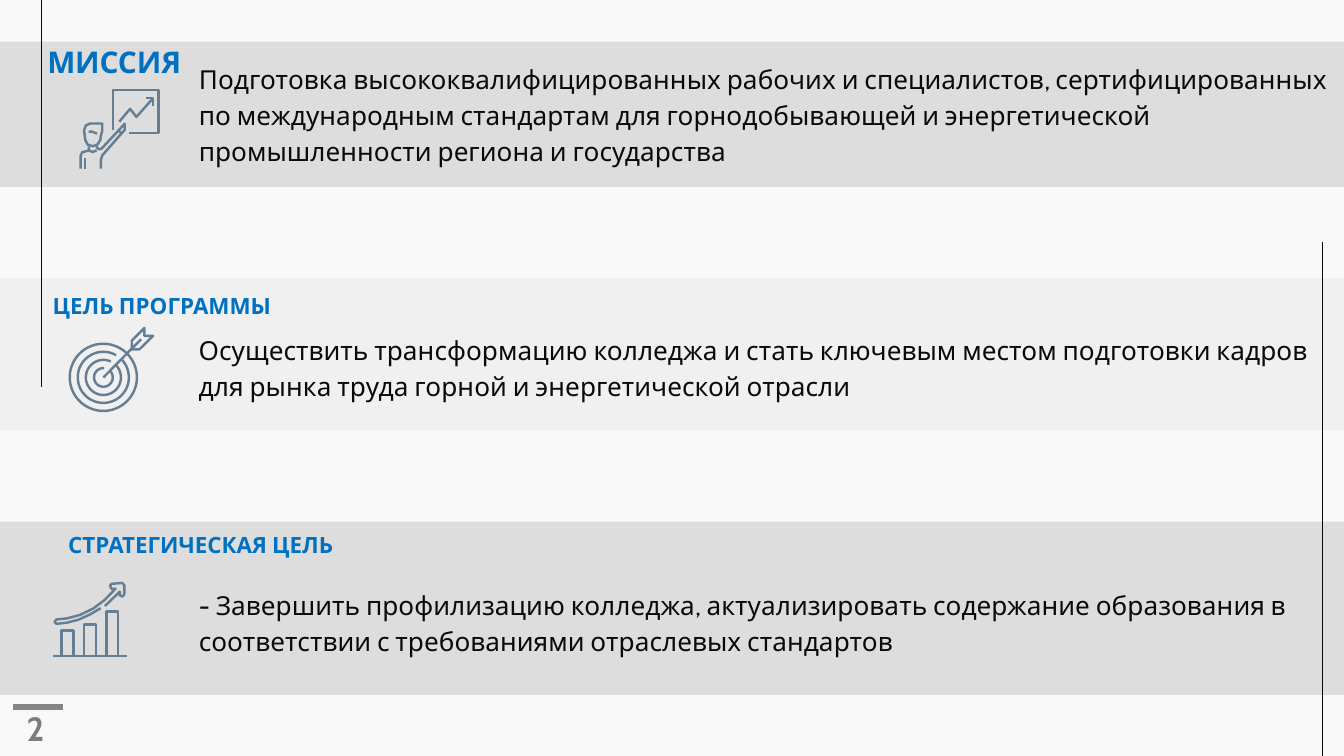
from math import cos, radians, sin

from lxml import etree
from pptx import Presentation
from pptx.dml.color import RGBColor
from pptx.enum import shapes, text
from pptx.oxml.ns import qn
from pptx.util import Pt

PAPER = RGBColor(0xF9, 0xF9, 0xF9)
DARK_BAND = RGBColor(0xDD, 0xDD, 0xDD)
LIGHT_BAND = RGBColor(0xF0, 0xF0, 0xF0)
INK = RGBColor(0x0A, 0x0A, 0x0A)
BLUE = RGBColor(0x00, 0x70, 0xC0)
STEEL = RGBColor(0x65, 0x7E, 0x93)
RULE_GREY = RGBColor(0x84, 0x85, 0x84)
NUMBER_GREY = RGBColor(0x7C, 0x7C, 0x7C)

FONT = "Cabin"
WIDTH, HEIGHT = 720, 405
BODY_LEFT = 99.4
ICON_LINE = 1.3

BANDS = [(279.4, 92.9, DARK_BAND), (149, 81.4, LIGHT_BAND), (22.3, 77.8, DARK_BAND)]

STATEMENTS = [
    ((BODY_LEFT, 24.5, 622.8, 74.2),
     "Подготовка высококвалифицированных рабочих и специалистов, сертифицированных "
     "по международным стандартам для горнодобывающей и энергетической "
     "промышленности региона и государства"),
    ((BODY_LEFT, 169.2, 619.2, 56.9),
     "Осуществить трансформацию колледжа и стать ключевым местом подготовки кадров "
     "для рынка труда горной и энергетической отрасли"),
    ((BODY_LEFT, 306, 608.4, 59.8),
     "- Завершить профилизацию колледжа, актуализировать содержание образования в "
     "соответствии с требованиями отраслевых стандартов"),
]

HEADINGS = [
    ((13.7, 150.5, 146.2, 27.4), "ЦЕЛЬ ПРОГРАММЫ"),
    ((11.5, 275.8, 192.2, 30.2), "СТРАТЕГИЧЕСКАЯ ЦЕЛЬ"),
]

BOARD = [(60.5, 69.5), (60.5, 48.2), (85, 48.2), (85, 71.3), (69, 71.3)]
BOARD_TREND = [(63.9, 65.2), (69.7, 58.3), (73.1, 62.6), (82, 52.6)]
TREND_TIP = [(78.3, 52.6), (82.1, 52.6), (82.1, 57)]
HEAD = [(48.2, 66.2), (54.8, 66.2), (54.8, 70), (54, 73), (53.8, 75), (52.2, 77.5),
        (49.7, 78.4), (47, 77.5), (45.7, 75), (45.4, 72.5), (45, 70), (46, 67.3), (48.2, 66.2)]
FRINGE = [(47.5, 70.5), (49.5, 70.6), (52, 71.6)]
SHOULDER = [(43.2, 90.4), (43.2, 83.5), (44, 81.7), (47.6, 80.6), (47.6, 78.5)]
COLLAR = [(47.6, 80.6), (49.7, 81.5), (51.7, 80.5)]
ARM = [(51.7, 78.5), (52.2, 79.5), (53.3, 80), (54.5, 79.6), (66.8, 66.3),
       (66.8, 69.6), (54.7, 83.4), (54, 86), (54, 90.4)]
POINTER_GRIP = [(63.5, 70), (65.2, 71.6)]
SLEEVE = [(45.5, 84.7), (45.5, 90.4)]
PRESENTER = [BOARD, BOARD_TREND, TREND_TIP, HEAD, FRINGE, SHOULDER, COLLAR, ARM,
             POINTER_GRIP, SLEEVE]

BULLSEYE = (55.4, 202.2)
RINGS = [(18, 360), (13.7, 345), (9.4, 340), (5, 320)]
DART_SHAFT = [BULLSEYE, (75.6, 181.7)]
DART_FEATHER = [(70.6, 187.2), (70.6, 182.6), (77.4, 175.7), (77.4, 180), (82, 180),
                (74.7, 187.2), (70.6, 187.2)]

BASELINE = 351.4
BAR_TOPS = [337.7, 334.5, 327.6]
GROWTH_ARROW = [(54, 325.8), (48, 329.3), (42, 332), (36, 333.6), (30.2, 334.2),
                (29.2, 333.2), (30.2, 331.9), (36, 331.3), (43, 329.4), (50, 326),
                (56, 321.5), (61.9, 315.4), (59.7, 315.5), (59, 313.8), (59.8, 312.8),
                (65.5, 312.3), (66.6, 313.5), (66.6, 318.5), (65.6, 319.6),
                (64.2, 319), (64.2, 317), (56.2, 324.7)]


def add_band(slide, top, height, color):
    band = slide.shapes.add_shape(shapes.MSO_SHAPE.RECTANGLE, 0, Pt(top), Pt(WIDTH), Pt(height))
    band.shadow.inherit = False
    band.fill.solid()
    band.fill.fore_color.rgb = color
    band.line.fill.background()


def add_rule(slide, start, end, color=INK, weight=0.75):
    rule = slide.shapes.add_connector(shapes.MSO_CONNECTOR.STRAIGHT,
                                      *(Pt(v) for v in (*start, *end)))
    rule.line.color.rgb = color
    rule.line.width = Pt(weight)
    etree.SubElement(rule._element.spPr, qn("a:effectLst"))


def place(shape, box):
    shape.left, shape.top, shape.width, shape.height = (Pt(v) for v in box)


def write(shape, words, size=14, color=INK, bold=False, align=text.PP_ALIGN.LEFT,
          anchor=text.MSO_ANCHOR.TOP, spacing=1.0, inset=7.2, wrap=True):
    frame = shape.text_frame
    frame.auto_size = text.MSO_AUTO_SIZE.NONE
    frame.word_wrap = wrap
    frame.vertical_anchor = anchor
    frame.margin_left = frame.margin_right = Pt(7.2)
    frame.margin_top = frame.margin_bottom = Pt(inset)
    paragraph = frame.paragraphs[0]
    paragraph.alignment = align
    paragraph.line_spacing = spacing
    run = paragraph.add_run()
    run.text = words
    run.font.name = FONT
    run.font.size = Pt(size)
    run.font.bold = bold
    run.font.color.rgb = color


def add_text(slide, box, words, **style):
    write(slide.shapes.add_textbox(*(Pt(v) for v in box)), words, **style)


def add_stroke(slide, points):
    start, *rest = [(Pt(x), Pt(y)) for x, y in points]
    builder = slide.shapes.build_freeform(*start)
    builder.add_line_segments(rest, close=points[0] == points[-1])
    stroke = builder.convert_to_shape()
    stroke.shadow.inherit = False
    stroke.fill.background()
    stroke.line.color.rgb = STEEL
    stroke.line.width = Pt(ICON_LINE)


def ring(radius, sweep):
    """Points of a clockwise arc round the bullseye, starting at the dart."""
    x, y = BULLSEYE
    angles = [radians(-45 + sweep * step / 60) for step in range(61)]
    return [(x + radius * cos(a), y + radius * sin(a)) for a in angles]


def target():
    return [ring(*size) for size in RINGS] + [DART_SHAFT, DART_FEATHER]


def growth_chart():
    strokes = [[(28.4, BASELINE), (68, BASELINE)], GROWTH_ARROW]
    for index, top in enumerate(BAR_TOPS):
        left = 33 + 12 * index
        right = left + 6.3
        strokes.append([(left, BASELINE), (left, top), (right, top), (right, BASELINE)])
    return strokes


def main():
    deck = Presentation()
    deck.slide_width, deck.slide_height = Pt(WIDTH), Pt(HEIGHT)
    slide = deck.slides.add_slide(deck.slide_layouts[5])
    slide.background.fill.solid()
    slide.background.fill.fore_color.rgb = PAPER

    for band in BANDS:
        add_band(slide, *band)
    add_rule(slide, (708.5, HEIGHT), (708.5, 129.6))
    add_rule(slide, (22.3, 207.4), (22.3, 0))

    heading_style = dict(color=BLUE, bold=True, align=text.PP_ALIGN.CENTER,
                         anchor=text.MSO_ANCHOR.BOTTOM)
    mission = slide.shapes.title
    place(mission, (0.7, 22.3, 121, 27.4))
    write(mission, "МИССИЯ", size=16, **heading_style)
    slide.shapes._spTree.append(mission._element)  # bring in front of the bands
    for box, words in HEADINGS:
        add_text(slide, box, words, size=12, **heading_style)
    for box, words in STATEMENTS:
        add_text(slide, box, words, spacing=1.15)

    for icon in (PRESENTER, target(), growth_chart()):
        for points in icon:
            add_stroke(slide, points)

    add_rule(slide, (7.2, 378.7), (33.8, 378.7), RULE_GREY, 3)
    add_text(slide, (7.2, 375.8, 25.9, 28.8), "2", size=18, color=NUMBER_GREY, bold=True,
             inset=3.6, wrap=False)
    deck.save("out.pptx")


if __name__ == "__main__":
    main()
